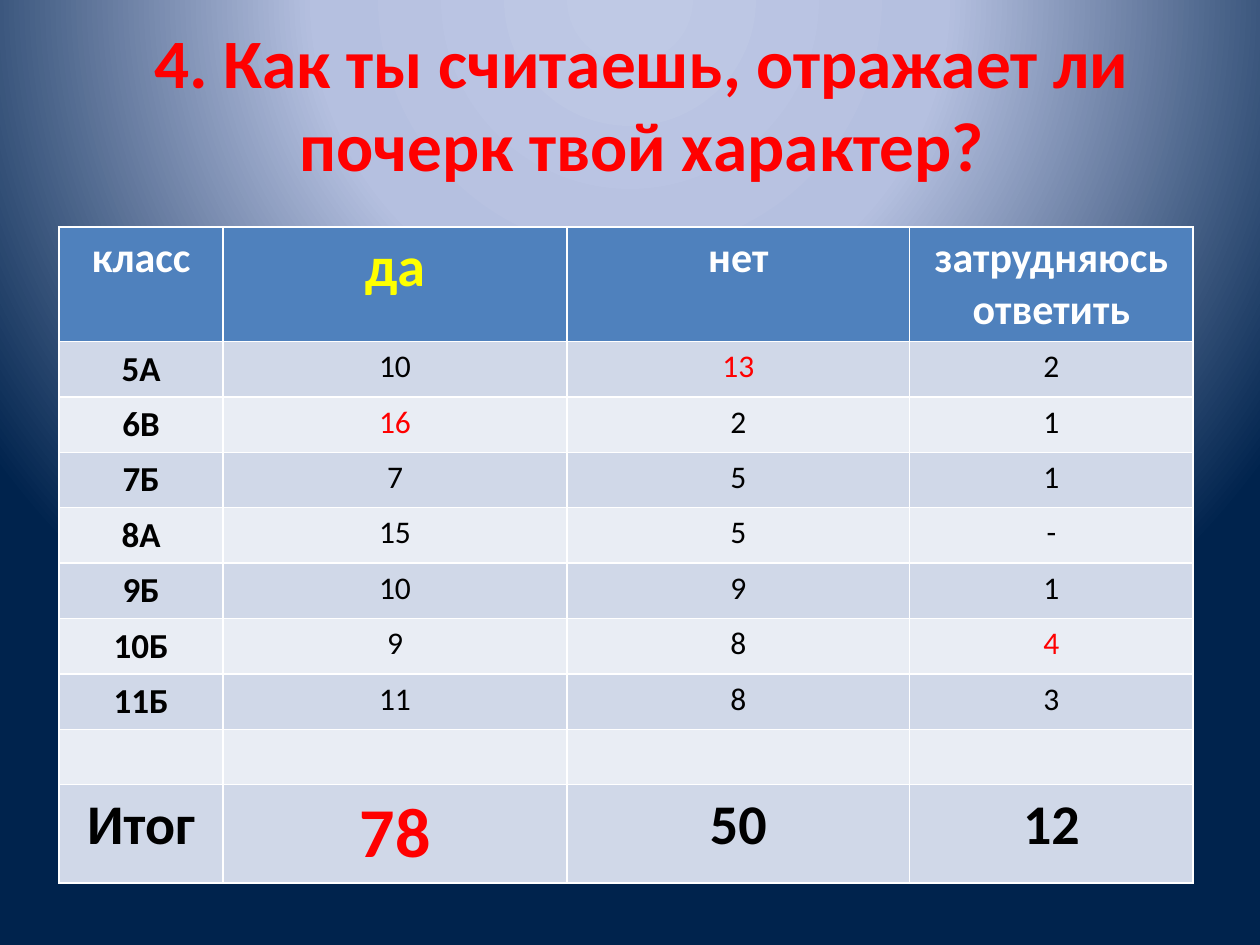
from pptx import Presentation
from pptx.dml.color import RGBColor
from pptx.enum.text import MSO_ANCHOR, PP_ALIGN
from pptx.oxml import parse_xml
from pptx.oxml.ns import nsdecls
from pptx.util import Inches, Pt

CENTER = PP_ALIGN.CENTER
MIDDLE = MSO_ANCHOR.MIDDLE
RED = RGBColor(0xFF, 0x00, 0x00)
YELLOW = RGBColor(0xFF, 0xFF, 0x00)
WHITE = RGBColor(0xFF, 0xFF, 0xFF)
BLACK = RGBColor(0x00, 0x00, 0x00)
HEADER_BLUE = RGBColor(0x4F, 0x81, 0xBD)
BAND_DARK = RGBColor(0xD0, 0xD8, 0xE8)
BAND_LIGHT = RGBColor(0xE9, 0xED, 0xF4)
GLOW = RGBColor(0xBF, 0xC9, 0xE5)
HAZE = RGBColor(0xB5, 0xC0, 0xE0)
NAVY = RGBColor(0x00, 0x23, 0x4D)


def write_centered(paragraph, text, size, color, bold):
    paragraph.alignment = CENTER
    run = paragraph.add_run()
    run.text = text
    run.font.color.rgb = color
    font_format = {"name": "Calibri", "size": Pt(size), "bold": bold}
    for attribute, value in font_format.items():
        setattr(run.font, attribute, value)


prs = Presentation()
prs.slide_width = Inches(10)
prs.slide_height = Inches(7.5)
slide = prs.slides.add_slide(prs.slide_layouts[6])

stops = "".join(
    f'<a:gs pos="{percent * 1000}"><a:srgbClr val="{color}"/></a:gs>'
    for percent, color in [(0, GLOW), (40, HAZE), (100, NAVY)]
)
backdrop = parse_xml(
    f'<p:bg {nsdecls("p", "a")}><p:bgPr><a:gradFill rotWithShape="1">'
    f'<a:gsLst>{stops}</a:gsLst><a:path path="circle">'
    '<a:fillToRect l="50000" t="-80000" r="50000" b="180000"/></a:path>'
    '</a:gradFill><a:effectLst/></p:bgPr></p:bg>'
)
slide.element.cSld.insert(0, backdrop)

question = slide.shapes.add_textbox(
    Inches(0.5), Inches(0.3), Inches(9.19), Inches(1.03)
).text_frame
question.word_wrap = True
question.vertical_anchor = MIDDLE
write_centered(
    question.paragraphs[0],
    "4. Как ты считаешь, отражает ли почерк твой характер?",
    39.6, RED, True,
)

answers = [
    ["класс", "да", "нет", "затрудняюсь ответить"],
    ["5А", "10", "13", "2"],
    ["6В", "16", "2", "1"],
    ["7Б", "7", "5", "1"],
    ["8А", "15", "5", "-"],
    ["9Б", "10", "9", "1"],
    ["10Б", "9", "8", "4"],
    ["11Б", "11", "8", "3"],
    ["", "", "", ""],
    ["Итог", "78", "50", "12"],
]
highlights = {
    (0, 1): (32, YELLOW),
    (1, 2): (18, RED),
    (2, 1): (18, RED),
    (6, 3): (18, RED),
    (9, 1): (40, RED),
}
column_widths = [1.3, 2.73, 2.72, 2.25]
row_heights = [0.91] + [0.44] * 8 + [0.78]
total_row = len(answers) - 1

survey = slide.shapes.add_table(
    len(answers), len(column_widths),
    Inches(0.47), Inches(1.8), Inches(9), Inches(5.21),
).table
for column, width in zip(survey.columns, column_widths):
    column.width = Inches(width)

for r, (row_answers, height) in enumerate(zip(answers, row_heights)):
    survey.rows[r].height = Inches(height)
    for c, answer in enumerate(row_answers):
        cell = survey.cell(r, c)
        cell.fill.solid()
        if r == 0:
            band, size, color = HEADER_BLUE, 24, WHITE
        else:
            band = BAND_DARK if r % 2 else BAND_LIGHT
            size = 32 if r == total_row else 20 if c == 0 else 18
            color = BLACK
        cell.fill.fore_color.rgb = band
        size, color = highlights.get((r, c), (size, color))
        if answer:
            bold = r in (0, total_row) or c == 0
            write_centered(
                cell.text_frame.paragraphs[0], answer, size, color, bold
            )

prs.save("out.pptx")
